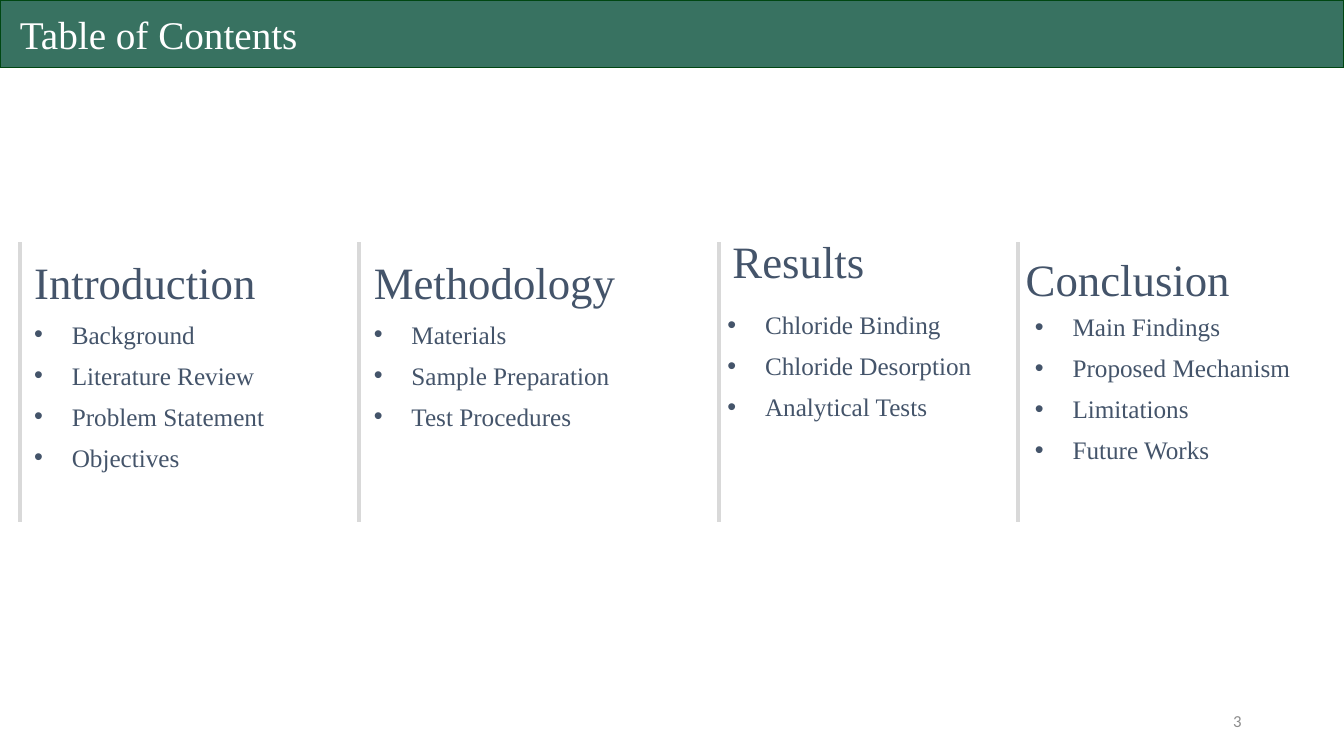
from lxml import etree
from pptx import Presentation
from pptx.dml.color import RGBColor
from pptx.enum.shapes import MSO_CONNECTOR, MSO_SHAPE
from pptx.enum.text import MSO_ANCHOR, PP_ALIGN
from pptx.oxml.ns import qn
from pptx.util import Cm, Pt

STRAIGHT = MSO_CONNECTOR.STRAIGHT
RECTANGLE = MSO_SHAPE.RECTANGLE
MIDDLE = MSO_ANCHOR.MIDDLE
LEFT = PP_ALIGN.LEFT
RIGHT = PP_ALIGN.RIGHT

SERIF = "Times New Roman"
SLATE = "44546A"
SLIDE_WIDTH, SLIDE_HEIGHT = 33.87, 19.05
COLUMN_WIDTH = 8.56
BAR_TOP, BAR_BOTTOM = 6.1, 13.16
BAR_POSITIONS = (0.51, 9.04, 18.11, 25.65)
BULLET_INDENT = 0.95
LINE_SPACING = 1.08

INTRODUCTION = ("Background", "Literature Review", "Problem Statement", "Objectives")
METHODOLOGY = ("Materials", "Sample Preparation", "Test Procedures")
RESULTS = ("Chloride Binding", "Chloride Desorption", "Analytical Tests")
CONCLUSION = ("Main Findings", "Proposed Mechanism", "Limitations", "Future Works")


def color(value):
    return RGBColor.from_string(value)


def style(para, size, font, value):
    for span in para.runs:
        span.font.size = Pt(size)
        span.font.name = font
        span.font.color.rgb = color(value)


def add_bullet(para):
    properties = para._p.get_or_add_pPr()
    properties.set("marL", str(Cm(BULLET_INDENT)))
    properties.set("indent", str(-Cm(BULLET_INDENT)))
    etree.SubElement(properties, qn("a:buFont")).set("typeface", "Arial")
    etree.SubElement(properties, qn("a:buChar")).set("char", "•")


def add_section(page, left, top, height, heading="", spacing=LINE_SPACING, topics=()):
    box = page.shapes.add_textbox(Cm(left), Cm(top), Cm(COLUMN_WIDTH), Cm(height))
    frame = box.text_frame
    frame.word_wrap = True
    lines = ([heading] if heading else []) + list(topics)
    for number, line in enumerate(lines):
        para = frame.add_paragraph() if number else frame.paragraphs[0]
        para.text = line
        if line == heading:
            para.line_spacing = spacing
            style(para, 32, SERIF, SLATE)
        else:
            add_bullet(para)
            para.line_spacing = LINE_SPACING
            style(para, 18, SERIF, SLATE)
        if number:
            para.space_before = Pt(6)


def add_title(page, text):
    banner = page.shapes.add_shape(RECTANGLE, 0, 0, Cm(SLIDE_WIDTH), Cm(1.7))
    banner.shadow.inherit = False
    banner.fill.solid()
    banner.fill.fore_color.rgb = color("387261")
    banner.line.color.rgb = color("004712")
    banner.line.width = Pt(1)
    frame = banner.text_frame
    frame.text = text
    frame.margin_left = Cm(0.5)
    frame.vertical_anchor = MIDDLE
    frame.paragraphs[0].alignment = LEFT
    style(frame.paragraphs[0], 28, SERIF, "FFFFFF")


def add_bar(page, x):
    bar = page.shapes.add_connector(STRAIGHT, Cm(x), Cm(BAR_TOP), Cm(x), Cm(BAR_BOTTOM))
    bar.line.color.rgb = color("D9D9D9")
    bar.line.width = Pt(3)
    etree.SubElement(bar._element.spPr, qn("a:effectLst"))


def add_page_number(page, text):
    box = page.shapes.add_textbox(Cm(23.92), Cm(17.66), Cm(7.62), Cm(1.01))
    frame = box.text_frame
    frame.word_wrap = True
    frame.text = text
    frame.vertical_anchor = MIDDLE
    frame.paragraphs[0].alignment = RIGHT
    style(frame.paragraphs[0], 12, "Calibri", "8C8C8C")


def main():
    deck = Presentation()
    deck.slide_width = Cm(SLIDE_WIDTH)
    deck.slide_height = Cm(SLIDE_HEIGHT)
    page = deck.slides.add_slide(deck.slide_layouts[6])

    add_title(page, "Table of Contents")
    for x in BAR_POSITIONS:
        add_bar(page, x)
    add_section(page, 0.61, 4.93, 9.9, "Introduction", 2.0, INTRODUCTION)
    add_section(page, 9.17, 4.93, 9.9, "Methodology", 2.0, METHODOLOGY)
    add_section(page, 18.21, 5.66, 1.6, "Results")
    add_section(page, 18.08, 7.62, 4.52, topics=RESULTS)
    add_section(page, 25.6, 5, 2.87, "Conclusion", 1.9)
    add_section(page, 25.83, 7.67, 4.06, topics=CONCLUSION)
    add_page_number(page, "3")

    deck.save("out.pptx")


if __name__ == "__main__":
    main()
